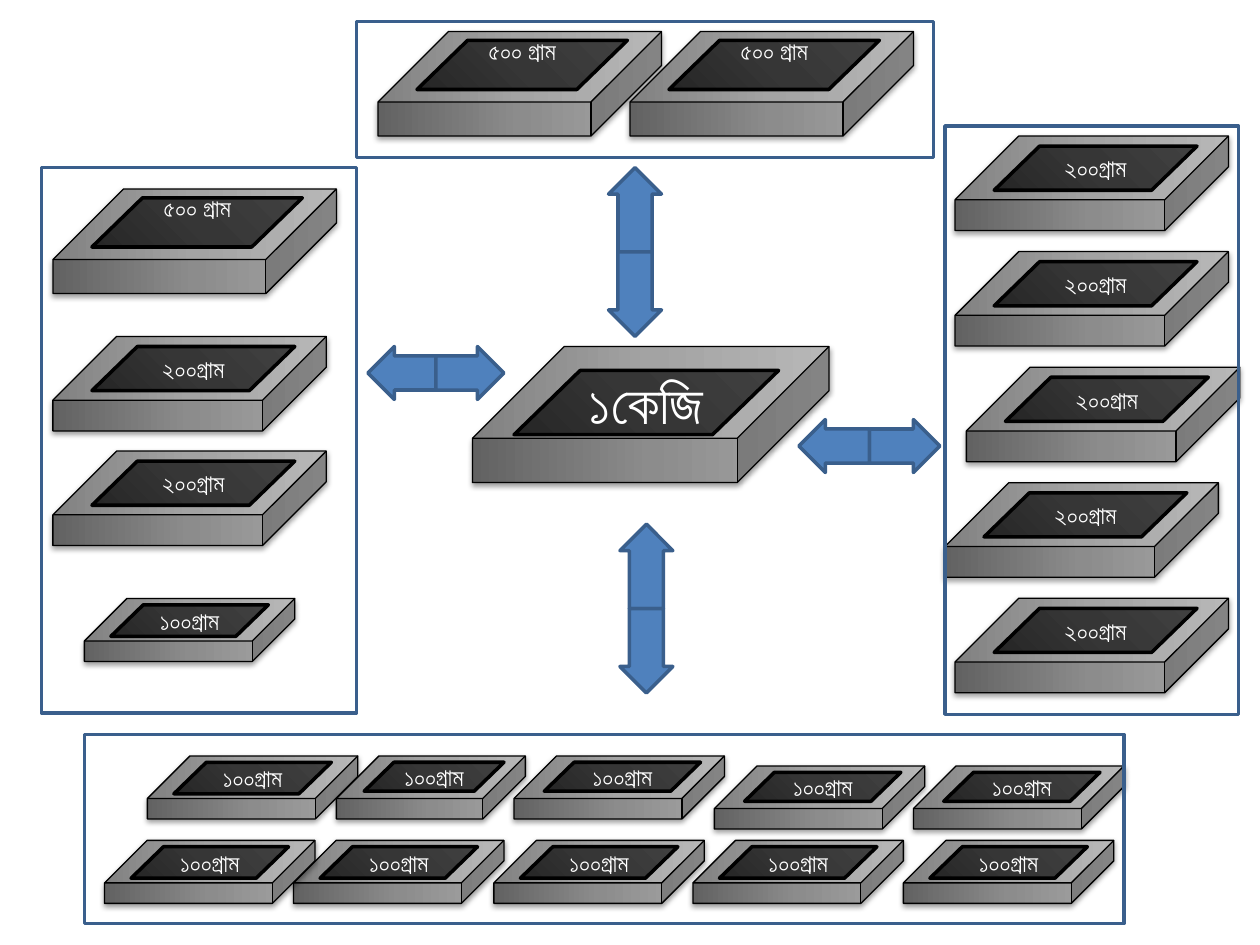
from lxml import etree
from pptx import Presentation
from pptx.dml.color import RGBColor
from pptx.enum.shapes import MSO_SHAPE
from pptx.enum.text import MSO_ANCHOR, PP_ALIGN
from pptx.oxml import parse_xml
from pptx.oxml.ns import nsdecls, qn
from pptx.util import Inches, Pt

CUBE, FACE = MSO_SHAPE.CUBE, MSO_SHAPE.PARALLELOGRAM
FRAME, ARROW = MSO_SHAPE.RECTANGLE, MSO_SHAPE.DOWN_ARROW
CENTER, MIDDLE = PP_ALIGN.CENTER, MSO_ANCHOR.MIDDLE

THEME = {
    "font": "Calibri", "label": 14, "main": 32,
    "text": "FFFFFF", "edge": "000000", "outline": "3A5F8C", "arrow": "4F81BD",
    "metal": ("626262", "8C8C8C", "A6A6A6"), "plate": ("262626", "363636", "404040"),
    "thin": 0.75, "thick": 2,
}

HALF = {"label": "৫০০ গ্রাম", "size": (2.25, 0.83), "face": (0.31, 0.07, 1.67, 0.39), "lift": 0.23}
FIFTH = {"label": "২০০গ্রাম", "size": (2.17, 0.75), "face": (0.31, 0.08, 1.61, 0.35)}
TENTH = {"label": "১০০গ্রাম", "size": (1.67, 0.5), "face": (0.21, 0.05, 1.25, 0.25)}
NARROW_TENTH = {**TENTH, "size": (1.5, 0.5), "face": (0.22, 0.05, 1.11, 0.23)}
SHALLOW_TENTH = {**TENTH, "face": (0.24, 0.05, 1.24, 0.23)}
KILO = {"label": "১কেজি", "size": (2.83, 1.08), "face": (0.33, 0.19, 2.1, 0.51), "type": "main"}

RIGHT_LEFTS = (7.58, 7.58, 7.67, 7.5, 7.58)
BOTTOM_LEFTS = (2.33, 3.92, 5.5, 7.17, 0.83)

GROUPS = [
    {"frame": (2.83, 0.17, 4.58, 1.08),
     "weights": [(HALF, left, 0.25) for left in (3, 5)]},
    {"frame": (0.33, 1.33, 2.5, 4.33),
     "weights": [(HALF, 0.42, 1.5), (FIFTH, 0.42, 2.67), (FIFTH, 0.42, 3.58), (TENTH, 0.67, 4.75)]},
    {"frame": (7.5, 1, 2.33, 4.67),
     "weights": [(FIFTH, left, 1.08 + row * 0.917) for row, left in enumerate(RIGHT_LEFTS)]},
    {"frame": (0.67, 5.83, 8.25, 1.5),
     "weights": [(TENTH, 1.17, 6), (NARROW_TENTH, 2.67, 6)]
     + [(TENTH, left, 6.67) for left in BOTTOM_LEFTS]
     + [(SHALLOW_TENTH, 4.08, 6), (SHALLOW_TENTH, 5.67, 6.08), (SHALLOW_TENTH, 7.25, 6.08)]},
    {"frame": None, "weights": [(KILO, 3.75, 2.75)]},
]

ARROW_WIDTH = 0.42
ARROW_PAIRS = [
    {"center": (5.04, 2), "length": 0.67, "turns": (180, 0)},
    {"center": (6.9, 3.54), "length": 0.56, "turns": (270, 90)},
    {"center": (3.46, 2.96), "length": 0.54, "turns": (90, 270)},
    {"center": (5.13, 4.83), "length": 0.67, "turns": (180, 0)},
]
DIRECTIONS = {0: (0, 1), 90: (-1, 0), 180: (0, -1), 270: (1, 0)}


def add_outlined(group, kind, at, color, width, adjustments=()):
    shape = group.shapes.add_shape(kind, *map(Inches, at))
    shape.shadow.inherit = False
    shape.line.color.rgb = RGBColor.from_string(color)
    shape.line.width = Pt(width)
    for index, value in enumerate(adjustments):
        shape.adjustments[index] = value
    return shape


def fill_gradient(shape, colors, angle):
    shape.fill.gradient()
    gradient = shape.element.spPr.find(qn("a:gradFill"))
    stops = "".join(
        f'<a:gs pos="{index * 50000}"><a:srgbClr val="{color}"/></a:gs>'
        for index, color in enumerate(colors))
    gradient.getparent().replace(gradient, parse_xml(
        f'<a:gradFill {nsdecls("a")} rotWithShape="1"><a:gsLst>{stops}</a:gsLst>'
        f'<a:lin ang="{angle * 60000}" scaled="0"/></a:gradFill>'))


def add_drop_shadow(shape):
    effects = shape.element.spPr.find(qn("a:effectLst"))
    shadow = etree.SubElement(effects, qn("a:outerShdw"), blurRad="40000",
                              dist="20000", dir="5400000", rotWithShape="0")
    color = etree.SubElement(shadow, qn("a:srgbClr"), val=THEME["edge"])
    etree.SubElement(color, qn("a:alpha"), val="38000")


def write_label(shape, weight):
    box = shape.text_frame
    settings = {"word_wrap": False, "vertical_anchor": MIDDLE, "margin_left": 0,
                "margin_right": 0, "margin_top": 0,
                "margin_bottom": Inches(weight.get("lift", 0))}
    for name, value in settings.items():
        setattr(box, name, value)
    para = box.paragraphs[0]
    para.alignment = CENTER
    span = para.add_run()
    span.text = weight["label"]
    span.font.name = THEME["font"]
    span.font.size = Pt(THEME[weight.get("type", "label")])
    span.font.color.rgb = RGBColor.from_string(THEME["text"])


def add_weight(group, weight, left, top):
    block = add_outlined(group, CUBE, (left, top, *weight["size"]),
                         THEME["edge"], THEME["thin"], (0.675,))
    fill_gradient(block, THEME["metal"], 0)
    add_drop_shadow(block)
    across, down, width, height = weight["face"]
    face = add_outlined(group, FACE, (left + across, top + down, width, height),
                        THEME["edge"], THEME["thick"], (1.03,))
    fill_gradient(face, THEME["plate"], 315)
    write_label(face, weight)


def add_arrow_pair(group, center, length, turns):
    for turn in turns:
        across, down = DIRECTIONS[turn]
        left = center[0] + (across * length - ARROW_WIDTH) / 2
        top = center[1] + (down * length - length) / 2
        arrow = add_outlined(group, ARROW, (left, top, ARROW_WIDTH, length),
                             THEME["outline"], THEME["thick"], (0.645, 0.5))
        arrow.rotation = turn
        arrow.fill.solid()
        arrow.fill.fore_color.rgb = RGBColor.from_string(THEME["arrow"])


def main():
    deck = Presentation()
    deck.slide_width, deck.slide_height = Inches(10), Inches(7.5)
    page = deck.slides.add_slide(deck.slide_layouts[6])
    for content in GROUPS:
        group = page.shapes.add_group_shape()
        for weight, left, top in content["weights"]:
            add_weight(group, weight, left, top)
        if content["frame"]:
            frame = add_outlined(group, FRAME, content["frame"], THEME["outline"], THEME["thick"])
            frame.fill.background()
    for pair in ARROW_PAIRS:
        add_arrow_pair(page.shapes.add_group_shape(), **pair)
    deck.save("out.pptx")


if __name__ == "__main__":
    main()
